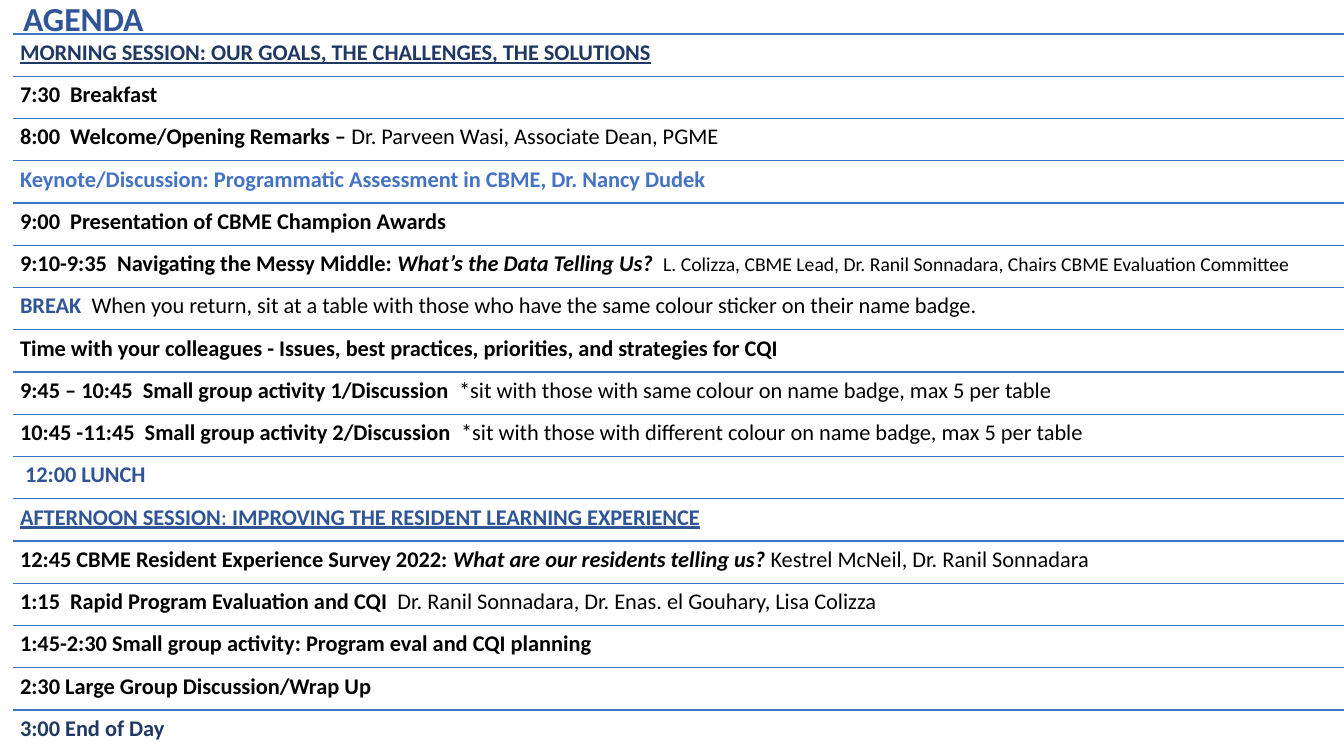
"""Build the agenda slide: a title above seventeen ruled rows of sessions."""
from lxml import etree
from pptx import Presentation, util as u
from pptx.dml.color import RGBColor
from pptx.enum import shapes, text

SCALE = 914400 / 100.8
LEFT, WIDTH, TOP, SPAN, HIGH = 13, 1331, 34, 676, 42
BLACK, BLUE, MID, NAVY = "000000", "4472C4", "2F5597", "203864"
STYLES = {
    "bold": (16, BLACK, True, False, False),
    "plain": (16, BLACK, False, False, False),
    "small": (14, BLACK, False, False, False),
    "slant": (16, BLACK, True, True, False),
    "title": (24, MID, True, False, False),
    "key": (16, BLUE, True, False, False),
    "pause": (16, MID, True, False, False),
    "close": (16, NAVY, True, False, False),
    "morning": (16, NAVY, True, False, True),
    "later": (16, MID, True, False, True),
    "colon": (16, MID, False, False, True),
}
TITLE = [("AGENDA", "title")]
ROWS = [
    [("MORNING SESSION: OUR GOALS, THE CHALLENGES, THE SOLUTIONS", "morning")],
    [("7:30  Breakfast", "bold")],
    [("8:00  Welcome/Opening Remarks – ", "bold"),
     ("Dr. Parveen Wasi, Associate Dean, PGME", "plain")],
    [("Keynote/Discussion: Programmatic Assessment in CBME, Dr. Nancy Dudek", "key")],
    [("9:00  Presentation of CBME Champion Awards", "bold")],
    [("9:10-9:35  Navigating the Messy Middle: ", "bold"),
     ("What’s the Data Telling Us?  ", "slant"),
     ("L. Colizza, CBME Lead, Dr. Ranil Sonnadara, Chairs CBME Evaluation Committee", "small")],
    [("BREAK  ", "pause"),
     ("When you return, sit at a table with those who have the same colour sticker "
      "on their name badge.", "plain")],
    [("Time with your colleagues - Issues, best practices, priorities, and strategies for CQI",
      "bold")],
    [("9:45 – 10:45  Small group activity 1/Discussion  ", "bold"),
     ("*sit with those with same colour on name badge, max 5 per table", "plain")],
    [("10:45 -11:45  Small group activity 2/Discussion  ", "bold"),
     ("*sit with those with different colour on name badge, max 5 per table", "plain")],
    [(" 12:00 LUNCH", "pause")],
    [("AFTERNOON SESSION", "later"), (": ", "colon"),
     ("IMPROVING THE RESIDENT LEARNING EXPERIENCE", "later")],
    [("12:45 CBME Resident Experience Survey 2022: ", "bold"),
     ("What are our residents telling us? ", "slant"),
     ("Kestrel McNeil, Dr. Ranil Sonnadara", "plain")],
    [("1:15  Rapid Program Evaluation and CQI  ", "bold"),
     ("Dr. Ranil Sonnadara, Dr. Enas. el Gouhary, Lisa Colizza", "plain")],
    [("1:45-2:30 Small group activity: Program eval and CQI planning", "bold")],
    [("2:30 Large Group Discussion/Wrap Up", "bold")],
    [("3:00 End of Day", "close")],
]


def px(count):
    return u.Emu(round(count * SCALE))


def fill_text(box, parts, inset):
    frame = box.text_frame
    frame.word_wrap = True
    frame.auto_size = text.MSO_AUTO_SIZE.NONE
    frame.vertical_anchor = text.MSO_ANCHOR.TOP
    frame.margin_left = frame.margin_right = px(inset)
    frame.margin_top = frame.margin_bottom = px(inset)
    para = frame.paragraphs[0]
    para.alignment = text.PP_ALIGN.LEFT
    para.line_spacing = 0.9
    para.font.name = "Calibri"
    for words, style in parts:
        run = para.add_run()
        run.text = words
        font = para.font if len(parts) == 1 else run.font
        size, hue, font.bold, font.italic, font.underline = STYLES[style]
        font.size = u.Pt(size)
        font.color.rgb = RGBColor.from_string(hue)


deck = Presentation()
deck.slide_width, deck.slide_height = px(1344), px(756)
slide = deck.slides.add_slide(deck.slide_layouts[5])

title = slide.shapes.title
title.left, title.top, title.width, title.height = px(LEFT), px(-8), px(WIDTH), px(HIGH)
fill_text(title, TITLE, 10)

for index, parts in enumerate(ROWS):
    top = px(TOP + index * SPAN / (len(ROWS) - 1))
    rule = slide.shapes.add_connector(
        shapes.MSO_CONNECTOR.STRAIGHT, px(LEFT), top, px(LEFT + WIDTH), top)
    rule.line.color.rgb = RGBColor.from_string(BLUE)
    rule.line.width = u.Pt(1)
    props = rule.line._get_or_add_ln().getparent()
    etree.SubElement(props, "{http://schemas.openxmlformats.org/drawingml/2006/main}effectLst")
    row = slide.shapes.add_textbox(px(LEFT), top, px(WIDTH), px(HIGH))
    fill_text(row, parts, 7)

deck.save("out.pptx")
